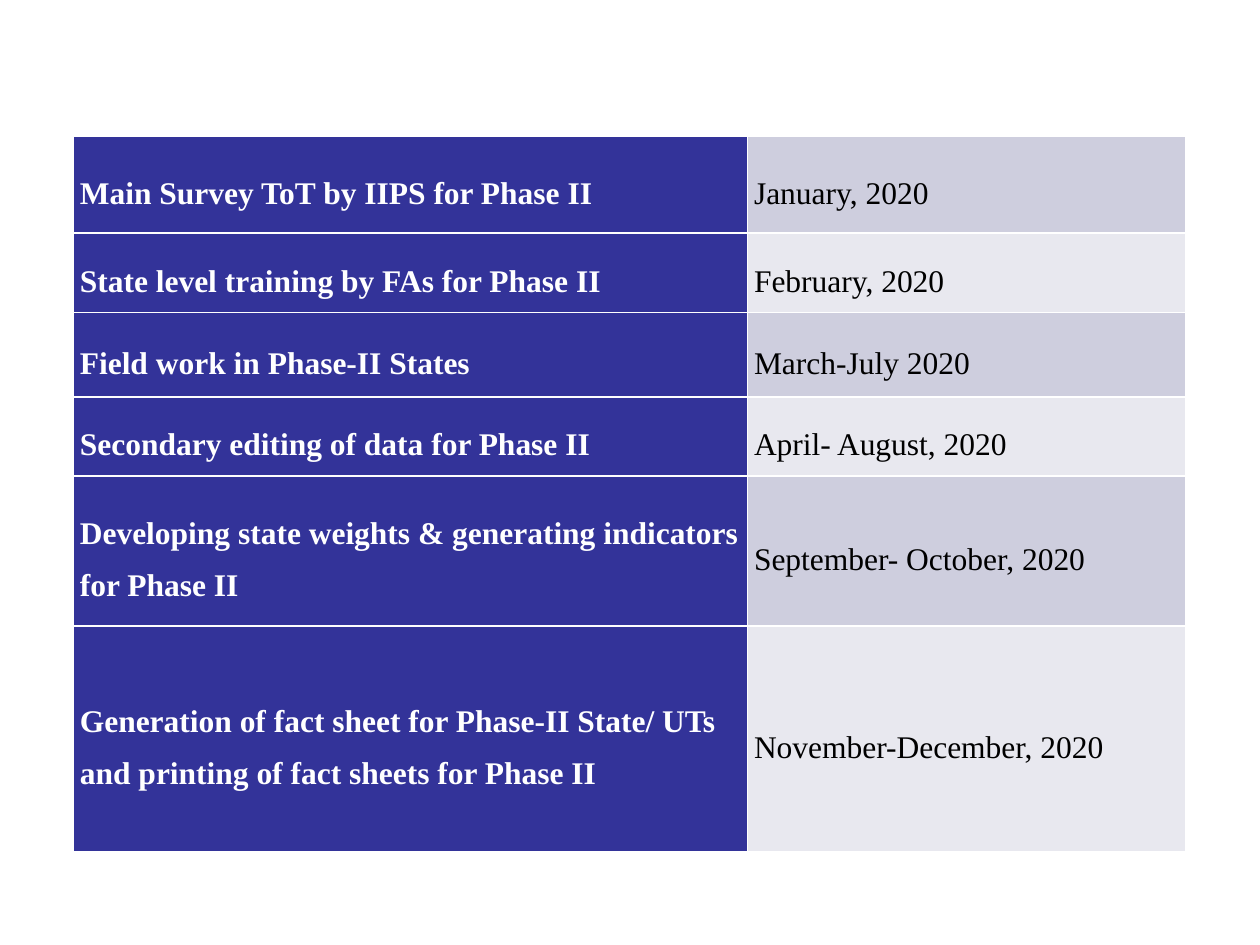
from lxml import etree
from pptx import Presentation
from pptx.dml.color import RGBColor as Rgb
from pptx.enum.text import MSO_ANCHOR as Anchor
from pptx.oxml.ns import qn
from pptx.util import Cm, Pt

HUES = {
    "head": "333399",
    "odd": "CECEDE",
    "even": "E8E8EF",
    "white": "FFFFFF",
    "black": "000000",
}
FONT = "Times New Roman"
COLS = (13.59, 8.84)
# Task, time, row height in cm
PLAN = [
    ("Main Survey ToT by IIPS for Phase II", "January, 2020", 1.95),
    ("State level training by FAs for Phase II", "February, 2020", 1.6),
    ("Field work in Phase-II States", "March-July 2020", 1.7),
    ("Secondary editing of data for Phase II", "April- August, 2020", 1.6),
    ("Developing state weights & generating indicators for Phase II",
     "September- October, 2020", 3.02),
    ("Generation of fact sheet for Phase-II State/ UTs and printing of "
     "fact sheets for Phase II", "November-December, 2020", 4.55),
]


def rule(cell):
    """Give the cell a thin white line on all four sides."""
    props = cell._tc.get_or_add_tcPr()
    for side in ("lnL", "lnR", "lnT", "lnB"):
        line = etree.SubElement(props, qn(f"a:{side}"), w=str(Pt(1)))
        fill = etree.SubElement(line, qn("a:solidFill"))
        etree.SubElement(fill, qn("a:srgbClr"), val=HUES["white"])


def write(cell, text, fill, ink, bold):
    rule(cell)
    cell.fill.solid()
    cell.fill.fore_color.rgb = Rgb.from_string(HUES[fill])
    cell.vertical_anchor = Anchor.MIDDLE
    cell.margin_left = cell.margin_right = Cm(0.13)
    cell.margin_top = cell.margin_bottom = 0
    para = cell.text_frame.paragraphs[0]
    para.line_spacing = 1.5
    run = para.add_run()
    run.text = text
    font = run.font
    font.name, font.size, font.bold = FONT, Pt(18), bold
    font.color.rgb = Rgb.from_string(HUES[ink])


def schedule(slide, left, top):
    high = sum(row[2] for row in PLAN)
    frame = slide.shapes.add_table(len(PLAN), len(COLS), Cm(left), Cm(top),
                                   Cm(sum(COLS)), Cm(high))
    table = frame.table
    table.first_row = table.horz_banding = False
    for col, wide in zip(table.columns, COLS):
        col.width = Cm(wide)
    for i, (task, time, tall) in enumerate(PLAN):
        table.rows[i].height = Cm(tall)
        write(table.cell(i, 0), task, "head", "white", True)
        band = "even" if i % 2 else "odd"
        write(table.cell(i, 1), time, band, "black", False)


def main():
    deck = Presentation()
    deck.slide_width, deck.slide_height = Cm(25.4), Cm(19.05)
    slide = deck.slides.add_slide(deck.slide_layouts[6])
    schedule(slide, 1.48, 2.75)
    deck.save("out.pptx")


if __name__ == "__main__":
    main()
